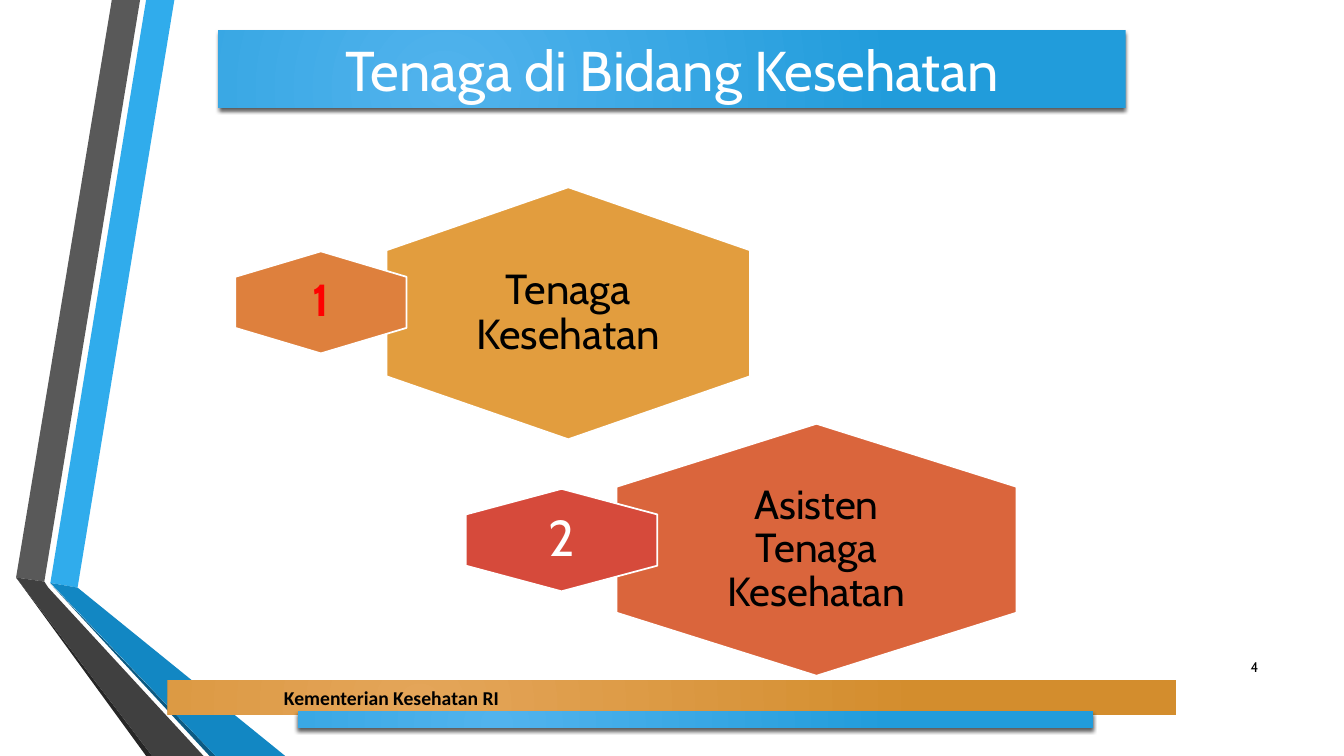
import pptx
import pptx.util
import pptx.dml.color
import pptx.enum.shapes
import pptx.enum.text
import pptx.oxml
import pptx.oxml.ns

COLS, ROWS = 160, 90
SHAPE = pptx.enum.shapes.MSO_SHAPE
ALIGN = pptx.enum.text.PP_ALIGN
ANCHOR = pptx.enum.text.MSO_ANCHOR
NS = pptx.oxml.ns.nsdecls("a")
GLOW = (f'<a:path {NS} path="circle">'
        '<a:fillToRect l="50000" t="100000" r="100000" b="50000"/></a:path>')
SHADE = (f'<a:outerShdw {NS} blurRad="38100" dist="25400" dir="5400000" rotWithShape="0">'
         '<a:srgbClr val="000000"><a:alpha val="64000"/></a:srgbClr></a:outerShdw>')

BLUE = ("51B3ED", "219CDB")
GOLD = ("E4A559", "D38D2D")

# Fill and corner points, in grid cells
RIBBONS = [
    ("30ACEC", [(6, 69.4), (9.24, 69.96), (20.76, 0), (17.4, 0)]),
    ("595959", [(16.68, 0), (13.32, 0), (1.92, 68.76), (5.28, 69.24)]),
    ("262626", [(1.92, 68.76), (17.4, 90), (18.12, 90)]),
    ("0C5A82", [(6, 69.48), (24.96, 90), (25.68, 90)]),
    ("1287C3", [(6, 69.4), (25.68, 90), (33.96, 90), (9.24, 69.96)]),
    ("404040", [(24.24, 90), (5.76, 69.96), (5.28, 69.24), (1.92, 68.76), (18.12, 90)]),
]

# Centre, size, fill, words, text format
HEXES = [
    (67.65, 37.3, 43.3, 30, "E29D3E", "Tenaga Kesehatan", dict(size=30, inset=1.44)),
    (38.2, 36, 20.4, 12.15, "DE803D", "1", dict(size=32, color="FF0000", bold=True)),
    (97.2, 65.45, 47.6, 30, "DA653C", "Asisten Tenaga Kesehatan", dict(size=29, inset=1.44)),
    (66.85, 64.3, 22.8, 12.2, "D64A3B", "2", dict(size=36, color="FFFFFF")),
]


def tint(code):
    return pptx.dml.color.RGBColor.from_string(code)


class Deck:
    """Holds the style and the current slide; lengths are grid cells."""

    def __init__(self, font):
        self.font = font
        self.file = pptx.Presentation()
        self.file.slide_width = pptx.util.Inches(13.333)
        self.file.slide_height = pptx.util.Inches(7.5)
        self.slide = self.file.slides.add_slide(self.file.slide_layouts[6])
        self.shapes = self.slide.shapes

    def wide(self, cols):
        return round(self.file.slide_width * cols / COLS)

    def high(self, rows):
        return round(self.file.slide_height * rows / ROWS)

    def box(self, x, y, w, h):
        return self.wide(x), self.high(y), self.wide(w), self.high(h)

    def text(self, shape, words, size=10, color="000000", bold=False, font=None,
             align=ALIGN.CENTER, inset=0, left=None, leading=1.0):
        frame = shape.text_frame
        frame.word_wrap = True
        frame.vertical_anchor = ANCHOR.MIDDLE
        frame.margin_top = frame.margin_bottom = self.high(inset)
        frame.margin_right = self.wide(inset)
        frame.margin_left = self.wide(inset if left is None else left)
        para = frame.paragraphs[0]
        para.alignment = align
        para.line_spacing = leading
        run = para.add_run()
        run.text = words
        run.font.name = font or self.font
        run.font.size = pptx.util.Pt(size)
        run.font.bold = bold
        run.font.color.rgb = tint(color)

    def label(self, x, y, w, h, words, **style):
        self.text(self.shapes.add_textbox(*self.box(x, y, w, h)), words, **style)

    def ribbon(self, fill, points):
        spots = [(self.wide(x), self.high(y)) for x, y in points]
        pen = self.shapes.build_freeform(*spots[0])
        pen.add_line_segments(spots[1:], close=True)
        shape = pen.convert_to_shape()
        shape.shadow.inherit = False
        shape.fill.solid()
        shape.fill.fore_color.rgb = tint(fill)
        shape.line.fill.background()

    def bar(self, x, y, w, h, hues):
        """Add a rectangle with a round gradient and a soft shadow below."""
        shape = self.shapes.add_shape(SHAPE.RECTANGLE, *self.box(x, y, w, h))
        shape.line.fill.background()
        shape.fill.gradient()
        for stop, hue in zip(shape.fill.gradient_stops, hues):
            stop.color.rgb = tint(hue)
        props = shape.element.spPr
        line = props.find(".//" + pptx.oxml.ns.qn("a:lin"))
        line.getparent().replace(line, pptx.oxml.parse_xml(GLOW))
        shape.shadow.inherit = False
        props.find(pptx.oxml.ns.qn("a:effectLst")).append(pptx.oxml.parse_xml(SHADE))
        return shape

    def hexagon(self, x, y, w, h, fill, words, style):
        """Add a hexagon standing on a corner, with its words, centred at x, y."""
        wide, high = self.wide(w), self.high(h)
        shape = self.shapes.add_shape(
            SHAPE.HEXAGON, self.wide(x) - high // 2, self.high(y) - wide // 2, high, wide)
        shape.rotation = 90
        shape.adjustments[0] = 0.25
        shape.shadow.inherit = False
        shape.fill.solid()
        shape.fill.fore_color.rgb = tint(fill)
        shape.line.color.rgb = tint("FFFFFF")
        shape.line.width = pptx.util.Pt(1.25)
        self.label(x - w / 3, y - h / 3, w * 2 / 3, h * 2 / 3, words, leading=0.9, **style)


def main():
    deck = Deck("Cabin")
    for fill, points in RIBBONS:
        deck.ribbon(fill, points)
    title = deck.bar(26, 3.6, 108, 9.24, BLUE)
    deck.text(title, "Tenaga di Bidang Kesehatan", size=40, color="FFFFFF")
    for item in HEXES:
        deck.hexagon(*item)
    deck.label(143.8, 77, 7.2, 4.8, "4", align=ALIGN.RIGHT, inset=1.2)
    foot = deck.bar(20, 81, 120, 4.1, GOLD)
    deck.text(foot, "Kementerian Kesehatan RI", size=14, bold=True, font="Calibri",
              align=ALIGN.LEFT, left=13.8)
    deck.bar(35.5, 84.7, 94.6, 1.95, BLUE)
    deck.file.save("out.pptx")


if __name__ == "__main__":
    main()
